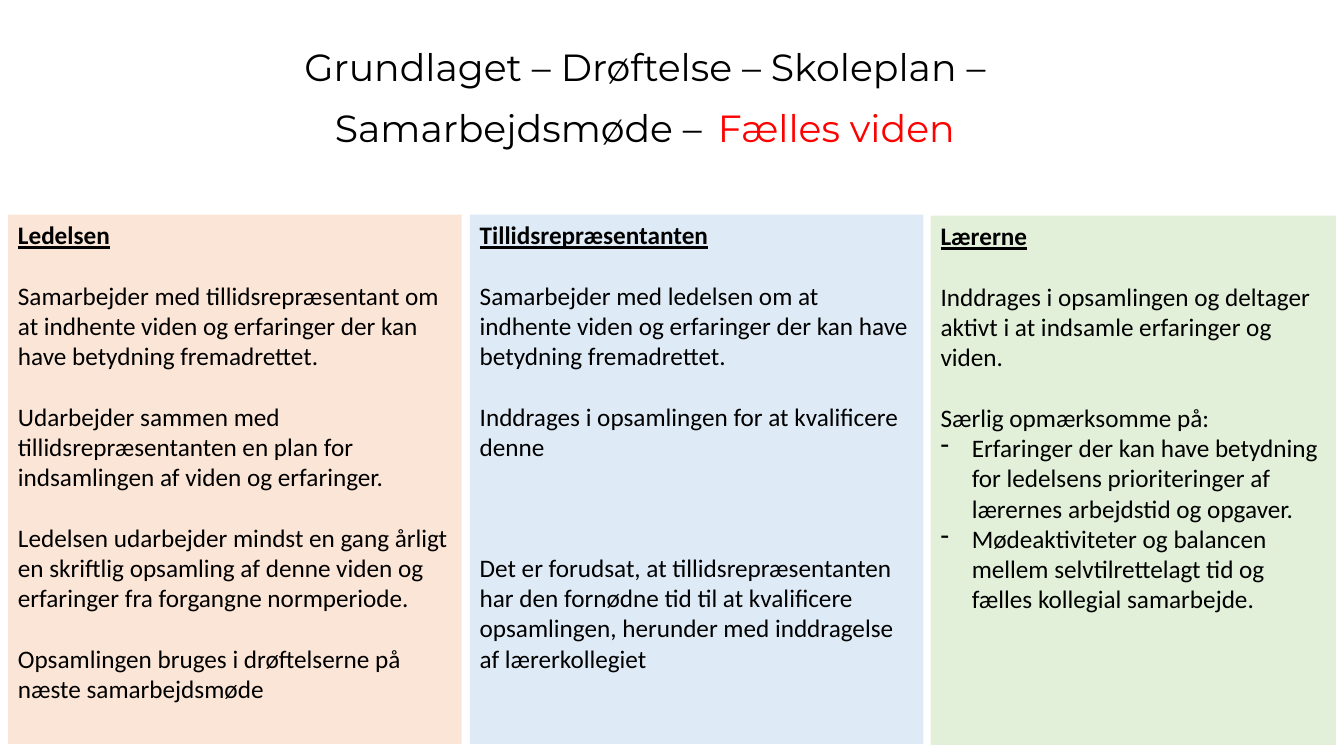
from lxml import etree
from pptx import Presentation
from pptx.dml.color import RGBColor
from pptx.enum.shapes import MSO_SHAPE
from pptx.enum.text import MSO_ANCHOR, PP_ALIGN
from pptx.oxml.ns import qn
from pptx.util import Pt

PX = 9144
RECTANGLE = MSO_SHAPE.RECTANGLE
TOP, BOTTOM = MSO_ANCHOR.TOP, MSO_ANCHOR.BOTTOM
LEFT, CENTER = PP_ALIGN.LEFT, PP_ALIGN.CENTER
BLACK = RGBColor(0x00, 0x00, 0x00)
RED = RGBColor(0xFF, 0x00, 0x00)
PEACH = RGBColor(0xFB, 0xE5, 0xD6)
PALE_BLUE = RGBColor(0xDE, 0xEB, 0xF7)
PALE_GREEN = RGBColor(0xE2, 0xF0, 0xD9)
LINE_PT = 21.6
DASH_INDENT = 31

TITLE_BOX = (162, 26, 955, 134)
TITLE_RUNS = [
    ("Grundlaget – Drøftelse – Skoleplan – Samarbejdsmøde –", 27, BLACK),
    (" ", 44, BLACK),
    ("Fælles viden", 27, RED),
]

# Each paragraph: lines of space before, dashed or not, text.
ROLES = [
    ((8, 213, 450, 525), PEACH, "Ledelsen", [
        (1, False, "Samarbejder med tillidsrepræsentant om at indhente viden og "
                   "erfaringer der kan have betydning fremadrettet."),
        (1, False, "Udarbejder sammen med tillidsrepræsentanten en plan for "
                   "indsamlingen af viden og erfaringer."),
        (1, False, "Ledelsen udarbejder mindst en gang årligt en skriftlig opsamling "
                   "af denne viden og erfaringer fra forgangne normperiode."),
        (1, False, "Opsamlingen bruges i drøftelserne på næste samarbejdsmøde"),
    ]),
    ((466, 213, 450, 525), PALE_BLUE, "Tillidsrepræsentanten", [
        (1, False, "Samarbejder med ledelsen om at indhente viden og erfaringer der "
                   "kan have betydning fremadrettet."),
        (1, False, "Inddrages i opsamlingen for at kvalificere denne"),
        (3, False, "Det er forudsat, at tillidsrepræsentanten har den fornødne tid til "
                   "at kvalificere opsamlingen, herunder med inddragelse af "
                   "lærerkollegiet"),
    ]),
    ((923, 214, 402, 525), PALE_GREEN, "Lærerne", [
        (1, False, "Inddrages i opsamlingen og deltager aktivt i at indsamle "
                   "erfaringer og viden."),
        (1, False, "Særlig opmærksomme på:"),
        (0, True, "Erfaringer der kan have betydning for ledelsens prioriteringer af "
                  "lærernes arbejdstid og opgaver."),
        (0, True, "Mødeaktiviteter og balancen mellem selvtilrettelagt tid og fælles "
                  "kollegial samarbejde."),
    ]),
]


def emu(box):
    """Turn a box in px into EMU."""
    return [length * PX for length in box]


def add_run(paragraph, text, font_name, size, color):
    """Add one styled run and return its font."""
    run = paragraph.add_run()
    run.text = text
    run.font.name = font_name
    run.font.size = Pt(size)
    run.font.color.rgb = color
    return run.font


def add_dash(paragraph):
    """Give a paragraph a hanging dash."""
    properties = paragraph._p.get_or_add_pPr()
    properties.set("marL", str(DASH_INDENT * PX))
    properties.set("indent", str(-DASH_INDENT * PX))
    etree.SubElement(properties, qn("a:buChar")).set("char", "-")


def add_title(slide, box):
    """Place the two-coloured heading at the bottom of its box."""
    frame = slide.shapes.add_textbox(*emu(box)).text_frame
    frame.word_wrap = True
    frame.vertical_anchor = BOTTOM
    heading = frame.paragraphs[0]
    heading.alignment = CENTER
    heading.line_spacing = 0.9
    for text, size, color in TITLE_RUNS:
        add_run(heading, text, "Montserrat", size, color)


def add_role(slide, box, color, role, duties):
    """Place one coloured column with a role and its duties."""
    column = slide.shapes.add_shape(RECTANGLE, *emu(box))
    column.shadow.inherit = False
    column.fill.solid()
    column.fill.fore_color.rgb = color
    column.line.fill.background()
    frame = column.text_frame
    frame.word_wrap = True
    frame.vertical_anchor = TOP
    heading = frame.paragraphs[0]
    heading.alignment = LEFT
    heading_font = add_run(heading, role, "Calibri", 18, BLACK)
    heading_font.bold = True
    heading_font.underline = True
    for blank_lines, dashed, text in duties:
        duty = frame.add_paragraph()
        duty.alignment = LEFT
        duty.space_before = Pt(blank_lines * LINE_PT)
        if dashed:
            add_dash(duty)
        add_run(duty, text, "Calibri", 18, BLACK)


def main():
    """Build and save the slide."""
    deck = Presentation()
    deck.slide_width, deck.slide_height = emu((1333, 750))
    slide = deck.slides.add_slide(deck.slide_layouts[6])
    add_title(slide, TITLE_BOX)
    for box, color, role, duties in ROLES:
        add_role(slide, box, color, role, duties)
    deck.save("out.pptx")


if __name__ == "__main__":
    main()
